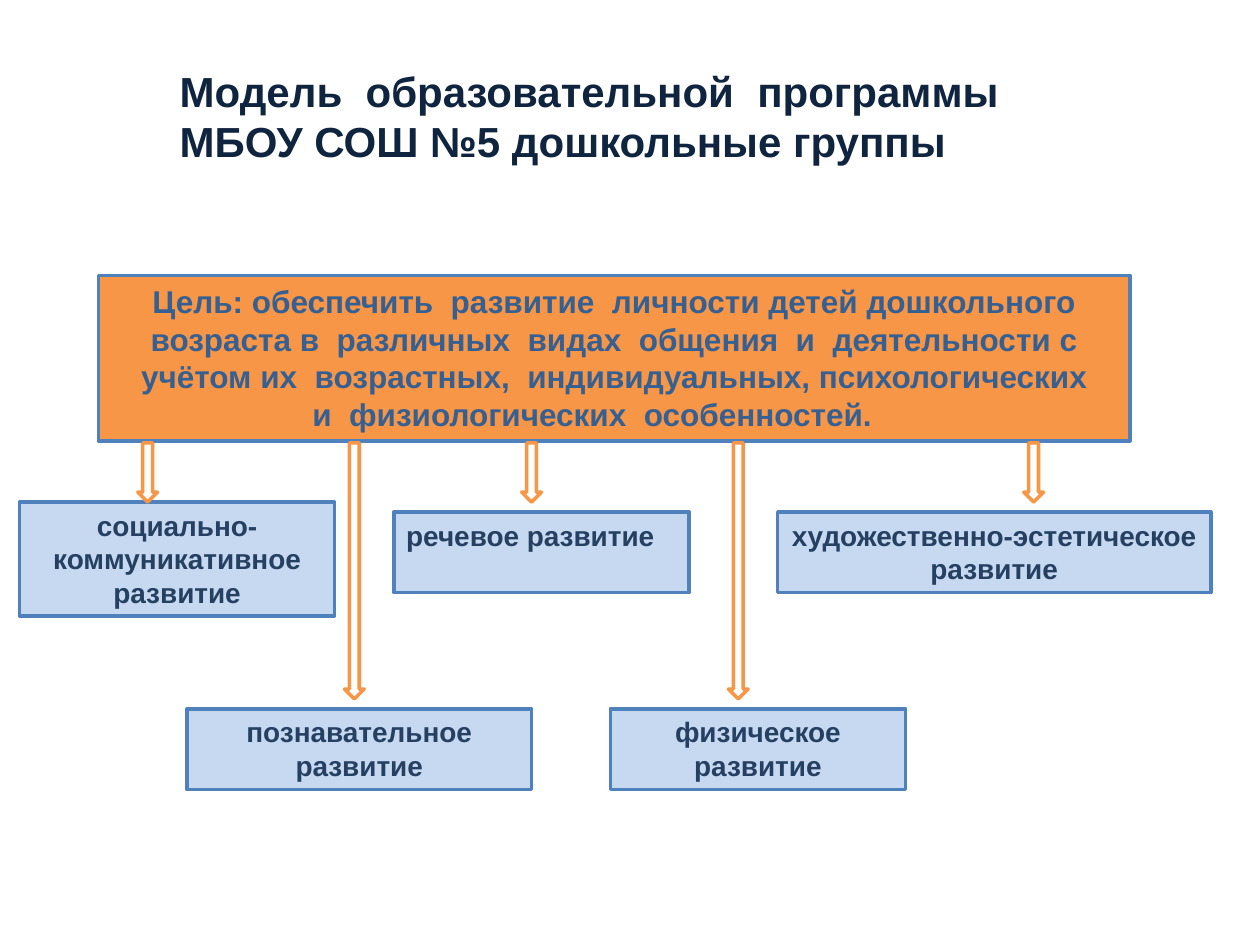
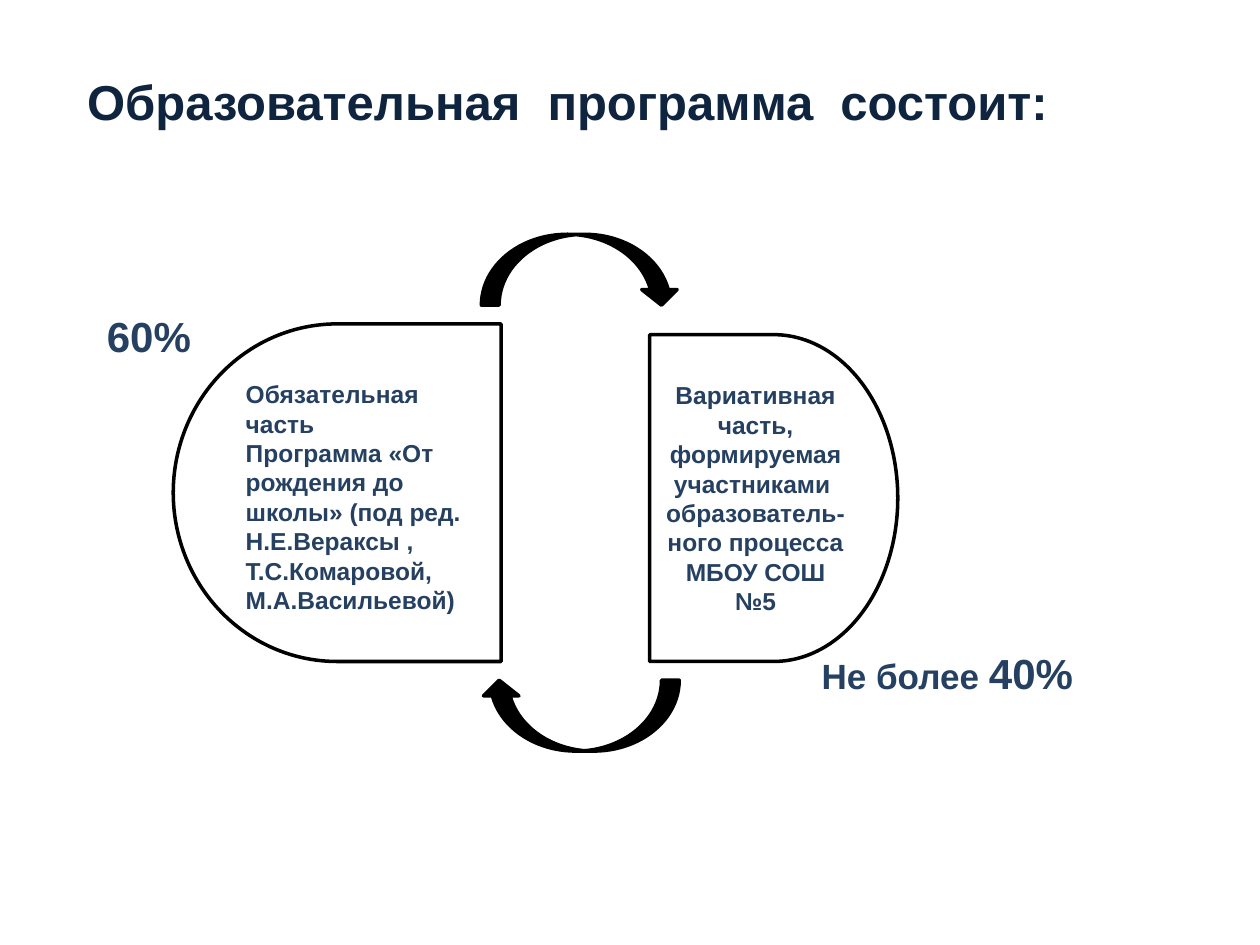
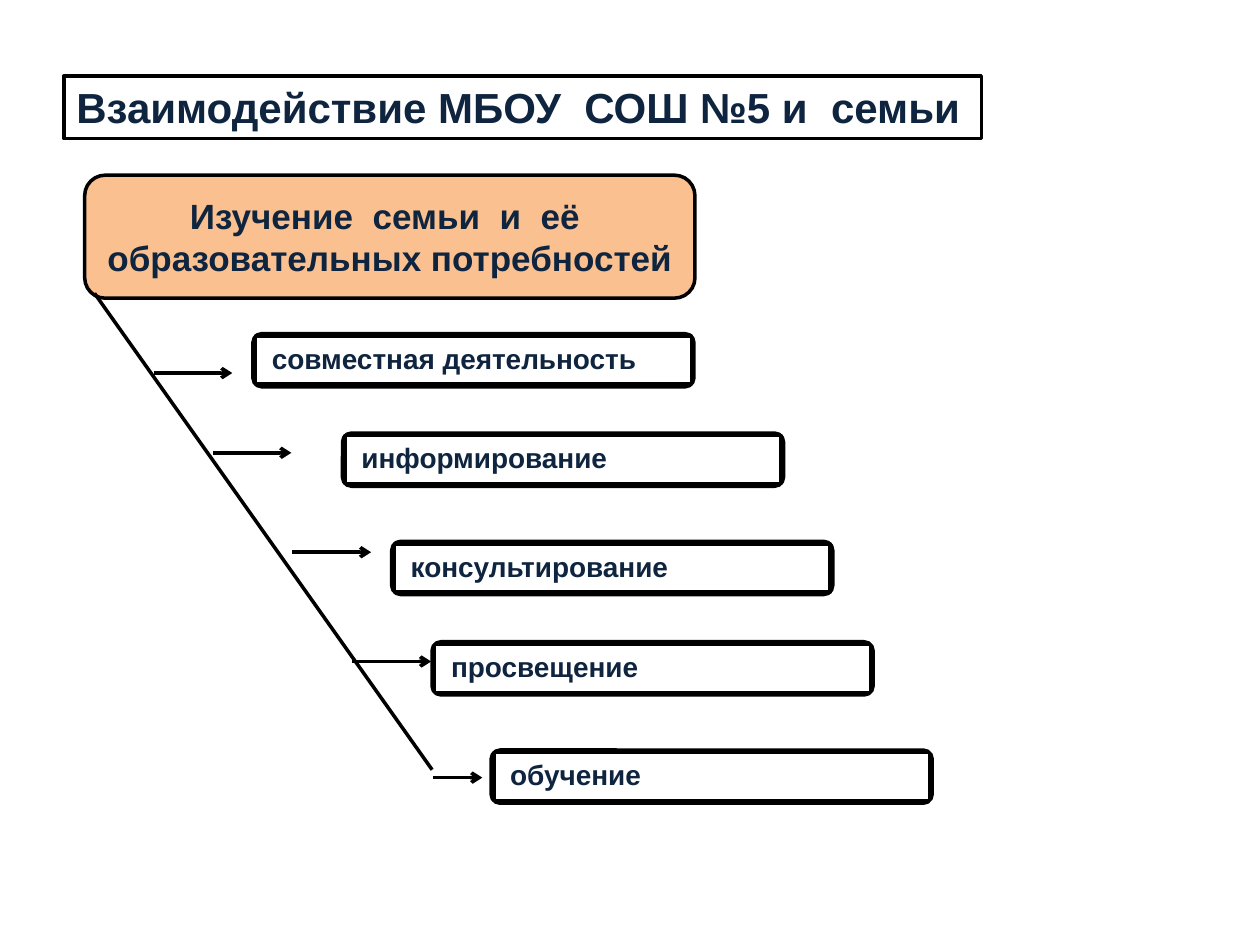
from lxml.etree import SubElement
from pptx import Presentation
from pptx.dml.color import RGBColor
from pptx.enum.shapes import MSO_CONNECTOR, MSO_SHAPE
from pptx.enum.text import MSO_ANCHOR, PP_ALIGN
from pptx.oxml.ns import qn
from pptx.util import Inches, Pt

WHITE = RGBColor(0xFF, 0xFF, 0xFF)
BLACK = RGBColor(0x00, 0x00, 0x00)
NAVY = RGBColor(0x0F, 0x24, 0x3E)
DARK_BLUE = RGBColor(0x25, 0x40, 0x61)
MID_BLUE = RGBColor(0x37, 0x60, 0x92)
BLUE = RGBColor(0x4F, 0x81, 0xBD)
PALE_BLUE = RGBColor(0xC6, 0xD9, 0xF1)
ORANGE = RGBColor(0xF7, 0x96, 0x46)
PEACH = RGBColor(0xFA, 0xC0, 0x90)

FONT = "Arial"
COLS, ROWS = 64, 48
LINE_WIDTH = Pt(2)


class Deck:
    def __init__(self):
        self.prs = Presentation()
        self.prs.slide_width = Inches(10)
        self.prs.slide_height = Inches(7.5)
        self.s = None

    def new_slide(self):
        self.s = self.prs.slides.add_slide(self.prs.slide_layouts[6])

    def grid(self, *values):
        units = (self.prs.slide_width / COLS, self.prs.slide_height / ROWS)
        return [round(v * units[i % 2]) for i, v in enumerate(values)]

    def fill_text(self, sp, paragraphs, size, color, align=PP_ALIGN.LEFT,
                  anchor=MSO_ANCHOR.TOP, wrap=True):
        tf = sp.text_frame
        tf.word_wrap = wrap
        tf.vertical_anchor = anchor
        for i, runs in enumerate(paragraphs):
            p = tf.paragraphs[0] if i == 0 else tf.add_paragraph()
            p.alignment = align
            for text, run_size in [(runs, size)] if isinstance(runs, str) else runs:
                r = p.add_run()
                r.text = text
                r.font.name = FONT
                r.font.size = Pt(run_size)
                r.font.bold = True
                r.font.color.rgb = color
        return tf

    def text(self, at, paragraphs, size, color=DARK_BLUE, wrap=True):
        sp = self.s.shapes.add_textbox(*self.grid(*at))
        self.fill_text(sp, paragraphs, size, color, wrap=wrap)

    def title(self, at, paragraphs, size=24):
        self.text(at, paragraphs, size, NAVY, wrap=False)

    def shape(self, kind, at, fill=WHITE, line=BLACK, rotation=0):
        sp = self.s.shapes.add_shape(kind, *self.grid(*at))
        sp.shadow.inherit = False
        sp.fill.solid()
        sp.fill.fore_color.rgb = fill
        sp.line.color.rgb = line
        sp.line.width = LINE_WIDTH
        sp.rotation = rotation
        return sp

    def card(self, col, row, width, label):
        height, inset = 2.7, 0.13
        frame = self.shape(MSO_SHAPE.ROUNDED_RECTANGLE, (col, row, width, height))
        face = self.shape(MSO_SHAPE.RECTANGLE, (
            col + inset, row + inset, width - 2 * inset, height - 2 * inset))
        tf = self.fill_text(face, [label], 16, NAVY, anchor=MSO_ANCHOR.MIDDLE)
        tf.margin_left = tf.margin_right = Inches(0.13)
        tf.margin_top = tf.margin_bottom = 0
        tf.paragraphs[0].line_spacing = 0.9
        self.s.shapes.add_group_shape([frame, face])

    def line(self, start, end, arrow=False):
        cn = self.s.shapes.add_connector(
            MSO_CONNECTOR.STRAIGHT, *self.grid(*start, *end))
        cn.line.color.rgb = BLACK
        cn.line.width = LINE_WIDTH
        sp_pr = cn._element.spPr
        if arrow:
            SubElement(sp_pr.find(qn("a:ln")), qn("a:tailEnd"), type="arrow")
        SubElement(sp_pr, qn("a:effectLst"))


def model_slide(deck):
    deck.new_slide()
    deck.title((8.5, 3, 44, 5.8), ["Модель  образовательной  программы",
                                   "МБОУ СОШ №5 дошкольные группы"])
    goal = deck.shape(MSO_SHAPE.RECTANGLE, (5, 14, 52.4, 8.4), ORANGE, BLUE)
    tf = deck.fill_text(goal, [
        "Цель: обеспечить  развитие  личности детей дошкольного возраста "
        "в  различных  видах  общения  и  деятельности с",
        "учётом их  возрастных,  индивидуальных, психологических",
        "и  физиологических  особенностей.",
    ], 18, MID_BLUE, PP_ALIGN.CENTER)
    tf.paragraphs[-1]._p.get_or_add_pPr().set("marR", str(Inches(0.35)))

    center, left = PP_ALIGN.CENTER, PP_ALIGN.LEFT
    areas = [
        (1, 25.5, 16, 5.8, center, ["социально-", "коммуникативное", "развитие"]),
        (9.5, 36, 17.5, 4.1, center, ["познавательное", "развитие"]),
        (20, 26, 15, 4.1, left, ["речевое развитие"]),
        (31, 36, 15, 4.1, center, ["физическое", "развитие"]),
        (39.5, 26, 22, 4.1, center, ["художественно-эстетическое", "развитие"]),
    ]
    for *at, align, label in areas:
        sp = deck.shape(MSO_SHAPE.RECTANGLE, at, PALE_BLUE, BLUE)
        deck.fill_text(sp, label, 16, DARK_BLUE, align)
    for col, height in [(7, 3), (17.5, 13), (26.5, 3), (37, 13), (52, 3)]:
        deck.shape(MSO_SHAPE.DOWN_ARROW, (col, 22.5, 1, height), line=ORANGE)


def parts_slide(deck):
    deck.new_slide()
    deck.title((3.8, 3.3, 50.7, 3.65), ["Образовательная  программа  состоит:"], 28)
    variable = deck.shape(MSO_SHAPE.FLOWCHART_DELAY, (33, 17, 12.6, 16.6))
    deck.fill_text(variable, [
        "Вариативная часть, формируемая участниками  образователь-ного процесса",
        "МБОУ СОШ №5",
    ], 14, DARK_BLUE, PP_ALIGN.CENTER, MSO_ANCHOR.MIDDLE)
    deck.shape(MSO_SHAPE.FLOWCHART_DELAY, (8.8, 16.45, 16.65, 17.15), rotation=180)
    deck.text((4.8, 15.45, 7.55, 3.2), ["60%"], 24)
    deck.text((41.1, 32.6, 15.1, 3.2), [[("Не более ", 20), ("40%", 24)]], 20)
    deck.text((11.85, 18.95, 12.6, 12.75), [
        "Обязательная часть",
        "Программа «От рождения до школы» (под ред.",
        "Н.Е.Вераксы , Т.С.Комаровой,",
        "М.А.Васильевой)",
    ], 14)
    for row, rotation in [(11.9, 0), (34.55, 180)]:
        arrow = deck.shape(MSO_SHAPE.CURVED_DOWN_ARROW, (24.45, row, 10.05, 3.6),
                           BLACK, rotation=rotation)
        for i, value in enumerate((0.25, 0.5, 0.22)):
            arrow.adjustments[i] = value


def family_slide(deck):
    deck.new_slide()
    title = deck.shape(MSO_SHAPE.RECTANGLE, (3.25, 3.85, 46.6, 3.2))
    deck.fill_text(title, ["Взаимодействие МБОУ  СОШ №5 и  семьи"], 24, NAVY,
                   wrap=False)
    study = deck.shape(MSO_SHAPE.FLOWCHART_ALTERNATE_PROCESS,
                       (4.3, 8.9, 31, 6.25), PEACH)
    deck.fill_text(study, ["Изучение  семьи  и  её  образовательных потребностей"],
                   20, NAVY, PP_ALIGN.CENTER, MSO_ANCHOR.MIDDLE)
    forms = [
        ("совместная деятельность", 12.85, 16.95, 7.8, 18.95, 4),
        ("информирование", 17.4, 22, 10.8, 23, 4),
        ("консультирование", 19.9, 27.5, 14.85, 28.05, 4),
        ("просвещение", 21.95, 32.6, 17.9, 33.6, 4),
        ("обучение", 24.95, 38.1, 22, 39.5, 2.5),
    ]
    deck.line((4.8, 14.9), (21.95, 39.1))
    for label, col, row, start, level, length in forms:
        deck.card(col, row, 22.4, label)
        deck.line((start, level), (start + length, level), arrow=True)


def main():
    deck = Deck()
    model_slide(deck)
    parts_slide(deck)
    family_slide(deck)
    deck.prs.save("out.pptx")


if __name__ == "__main__":
    main()
